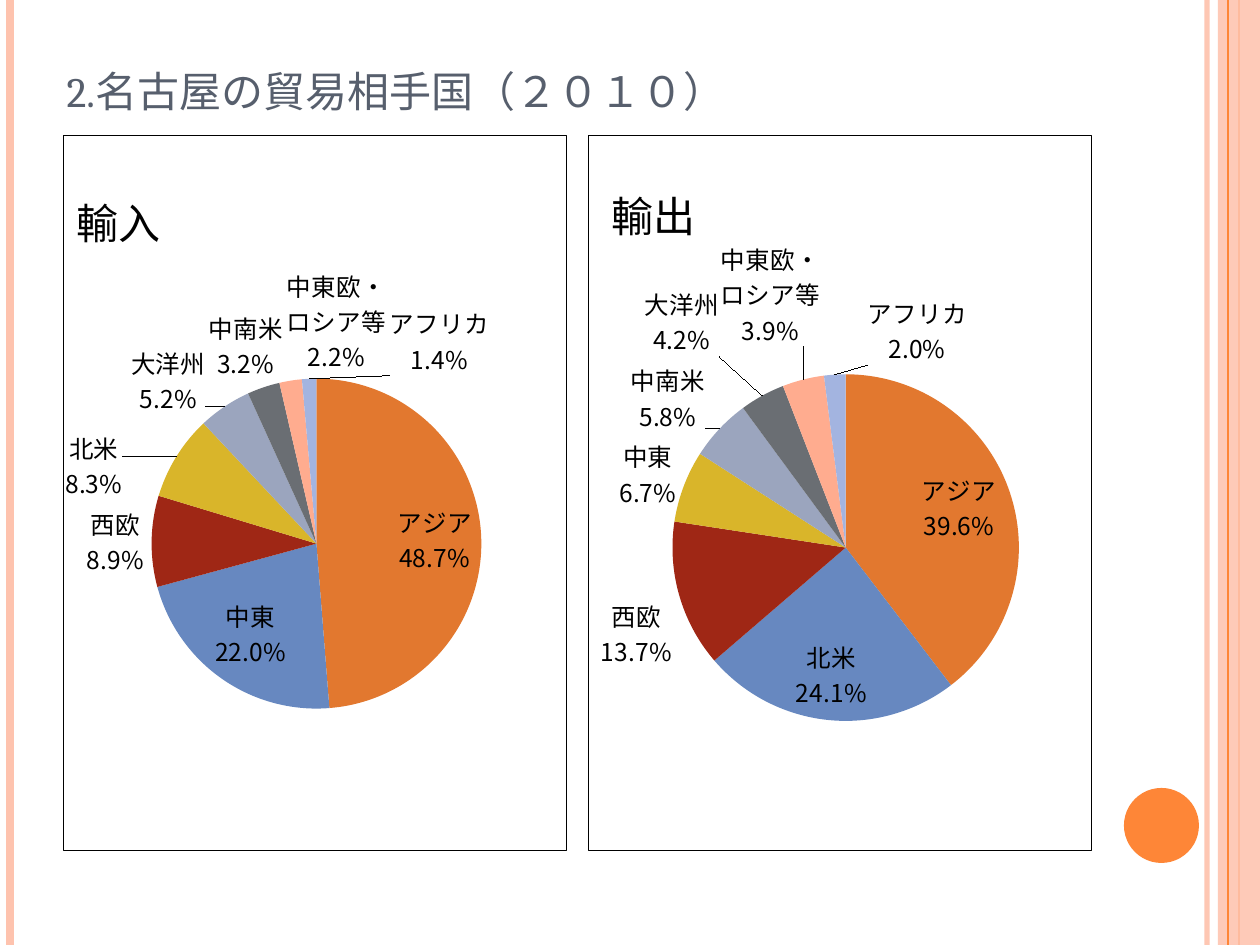
import copy
import pptx
import pptx.util
import pptx.oxml
import pptx.oxml.ns
import pptx.chart.data
import pptx.dml.color
import pptx.enum.chart
import pptx.enum.shapes
import pptx.enum.text
from dataclasses import dataclass

SCALE = 914400 / 126
NS = pptx.oxml.ns.nsdecls("c", "a")
QN = pptx.oxml.ns.qn


@dataclass(frozen=True)
class Theme:
    orange: str = "FE8637"
    pink: str = "FEC3AE"
    slate: str = "575F6D"
    ink: str = "000000"
    slices: tuple = ("E2782F", "6788C0", "9F2715", "D9B52A",
                     "9BA5BE", "6A6E73", "FFAC8F", "A3B4E0")
    serif: str = "Cambria"
    sans: str = "Noto Sans CJK JP"
    head: int = 30
    name: int = 24
    label: int = 14
    base: int = 10


T = Theme()

IMPORT = {
    "title": "輸入", "spot": (0.01, 0.06), "plot": (0.175, 0.164, 0.656, 0.814),
    "data": {"アジア": 48.7, "中東": 22, "西欧": 8.9, "北米": 8.3, "大洋州": 5.2,
             "中南米": 3.2, "中東欧・ロシア等": 2.2, "アフリカ": 1.4},
    "moves": {7: (131, 4)},
}
EXPORT = {
    "title": "輸出", "spot": (0.03, 0.05), "plot": (0.167, 0.334, 0.689, 0.485),
    "data": {"アジア": 39.6, "北米": 24.1, "西欧": 13.7, "中東": 6.7, "中南米": 5.8,
             "大洋州": 4.2, "中東欧・ロシア等": 3.9, "アフリカ": 2},
    "moves": {5: (-40, -33), 6: (19, -26), 7: (83, -2)},
}


def px(*nums):
    return [round(n * SCALE) for n in nums]


def rgb(code):
    return pptx.dml.color.RGBColor.from_string(code)


def style(thing, **values):
    for key, value in values.items():
        setattr(thing, key, value)


def font(item, size, color, name):
    style(item, size=pptx.util.Pt(size), name=name, bold=False)
    item.color.rgb = rgb(color)


def node(text):
    """Parse text, adding the namespaces to its first tag."""
    return pptx.oxml.parse_xml(text.replace(">", " " + NS + ">", 1))


def fade(part, share):
    """Set the opacity, in percent, of the colour inside part."""
    tone = next(part.iter(QN("a:srgbClr")))
    tone.append(node('<a:alpha val="%d"></a:alpha>' % (share * 1000)))


def rule(slide, x, high, width, color, share=100):
    kind = pptx.enum.shapes.MSO_CONNECTOR.STRAIGHT
    line = slide.shapes.add_connector(kind, *px(x, 0, x, high))
    line.line.width = pptx.util.Pt(width)
    line.line.color.rgb = rgb(color)
    props = line.element.spPr
    props.append(node("<a:effectLst></a:effectLst>"))
    if share < 100:
        fade(props, share)


def solid(slide, kind, box, color, share=100):
    shape = slide.shapes.add_shape(kind, *px(*box))
    shape.shadow.inherit = False
    shape.fill.solid()
    shape.fill.fore_color.rgb = rgb(color)
    shape.line.fill.background()
    if share < 100:
        fade(shape.element.spPr, share)


def frame(slide, box):
    """Draw the side bands and the dot."""
    left, top, wide, high = box
    kinds = pptx.enum.shapes.MSO_SHAPE
    right = left + wide
    rule(slide, right - 53, high, 3, T.pink, 93)
    rule(slide, left + 10, high, 4.5, T.pink)
    rule(slide, right - 21, high, 1.5, T.orange)
    solid(slide, kinds.RECTANGLE, (right - 42, top, 42, high), T.pink, 87)
    rule(slide, right - 32, high, 0.75, T.orange)
    solid(slide, kinds.OVAL, (right - 136, high - 157, 75, 75), T.orange)


def head(slide, box, text):
    shape = slide.shapes.title
    style(shape, **dict(zip(("left", "top", "width", "height"), px(*box))))
    style(shape.text_frame, text=text, word_wrap=True,
          vertical_anchor=pptx.enum.text.MSO_ANCHOR.BOTTOM)
    para = shape.text_frame.paragraphs[0]
    para.alignment = pptx.enum.text.PP_ALIGN.LEFT
    run = para.runs[0]
    font(run.font, T.head, T.slate, T.serif)
    run._r.get_or_add_rPr().set("cap", "small")


def layout(spots, inner=False, edge=True):
    """Make a manual chart layout from fractions x, y and maybe w, h."""
    tags = '<c:layoutTarget val="inner"/>' if inner else ""
    if edge:
        tags += '<c:xMode val="edge"/><c:yMode val="edge"/>'
    for key, value in zip("xywh", spots):
        tags += '<c:%s val="%.3f"/>' % (key, value)
    return node("<c:layout><c:manualLayout>%s</c:manualLayout></c:layout>" % tags)


def clear(parent):
    for old in parent.findall(QN("c:layout")):
        parent.remove(old)


def mark(series, moves, wide, high):
    """Label the slices, shifting those in moves by the given px."""
    labels = series.data_labels
    style(labels, show_category_name=True, show_percentage=True,
          show_value=False, number_format="0.0%",
          number_format_is_linked=False,
          position=pptx.enum.chart.XL_LABEL_POSITION.BEST_FIT)
    font(labels.font, T.label, T.ink, T.sans)
    root = labels._element
    root.find(QN("c:showPercent")).getnext().addnext(
        node("<c:separator>\n</c:separator>"))
    shared = [tag for tag in root if tag.tag != QN("c:showLeaderLines")]
    for spot, (idx, (dx, dy)) in enumerate(moves.items()):
        item = node('<c:dLbl><c:idx val="%d"/></c:dLbl>' % idx)
        item.append(layout((dx / wide, dy / high), edge=False))
        item.extend(copy.deepcopy(shared))
        root.insert(spot, item)


def pie(slide, box, trade):
    data = pptx.chart.data.CategoryChartData(number_format="General")
    data.categories = list(trade["data"])
    data.add_series("Series 1", list(trade["data"].values()))
    kind = pptx.enum.chart.XL_CHART_TYPE.PIE
    chart = slide.shapes.add_chart(kind, *px(*box), data).chart
    chart.has_legend = False
    font(chart.font, T.base, T.ink, T.serif)

    chart.has_title = True
    title = chart.chart_title
    title.text_frame.text = trade["title"]
    font(title.text_frame.paragraphs[0].runs[0].font, T.name, T.ink, T.serif)
    root = title._element
    clear(root)
    root.find(QN("c:tx")).addnext(layout(trade["spot"]))

    area = next(chart.element.iter(QN("c:plotArea")))
    clear(area)
    area.insert(0, layout(trade["plot"], inner=True))
    chart.element.find(QN("c:txPr")).addprevious(node(
        '<c:spPr><a:noFill/><a:ln w="9525"><a:solidFill><a:srgbClr val="%s"/>'
        "</a:solidFill></a:ln></c:spPr>" % T.ink))

    plot = chart.plots[0]
    plot.vary_by_categories = True
    series = plot.series[0]
    for idx, color in enumerate(T.slices):
        form = series.points[idx].format
        form.fill.solid()
        form.fill.fore_color.rgb = rgb(color)
        form.line.fill.background()
    mark(series, trade["moves"], box[2], box[3])


def main():
    deck = pptx.Presentation()
    deck.slide_width, deck.slide_height = px(1260, 945)
    slide = deck.slides.add_slide(deck.slide_layouts[5])
    frame(slide, (0, 0, 1260, 945))
    head(slide, (54, 37, 1029, 87), "2.名古屋の貿易相手国（２０１０）")
    for idx, trade in enumerate((IMPORT, EXPORT)):
        pie(slide, (63 + idx * 525, 135, 504, 716), trade)
    deck.save("out.pptx")


if __name__ == "__main__":
    main()
